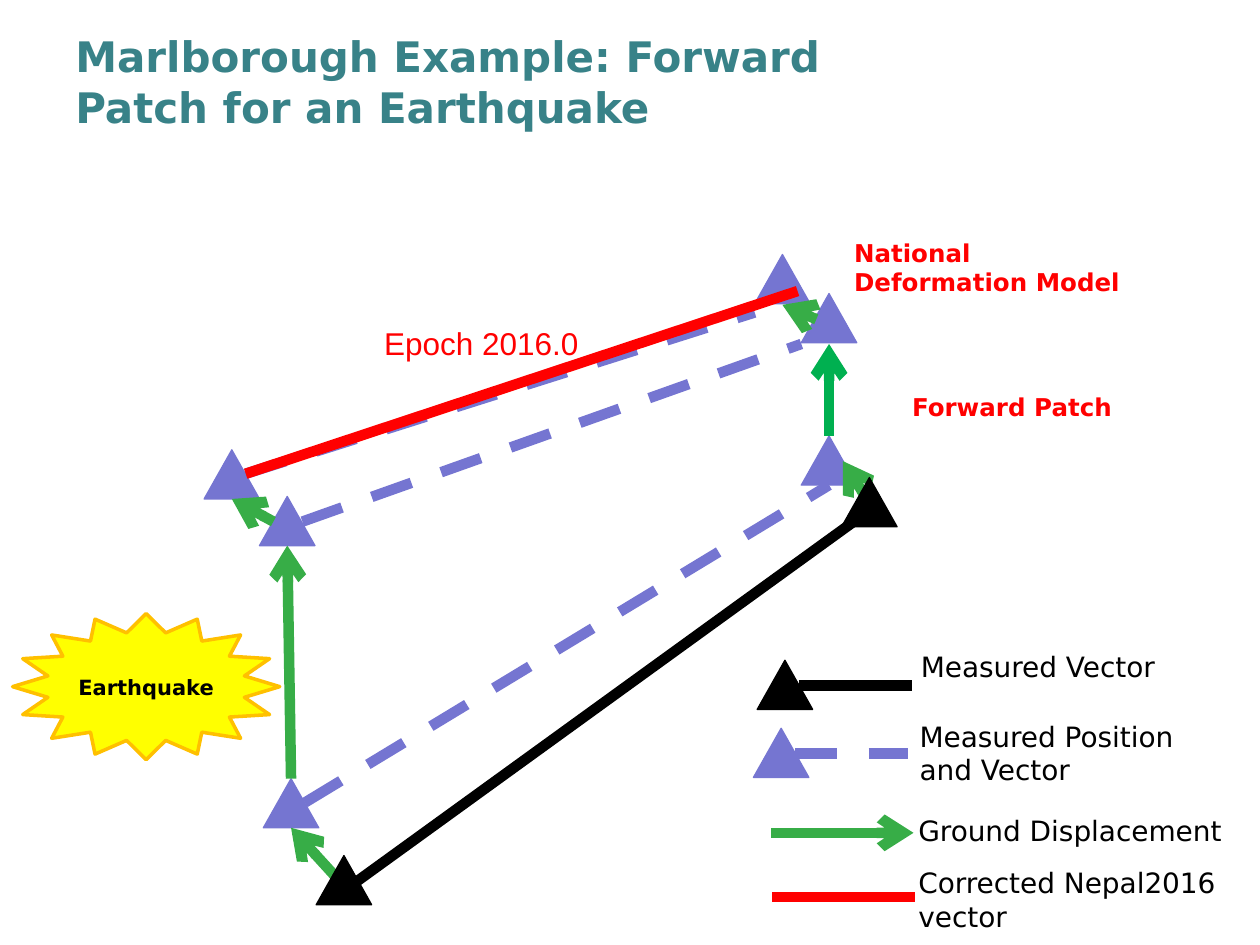
"""Build the Marlborough forward patch slide: survey vectors, ground displacement and legend."""
from lxml.etree import SubElement
from pptx import Presentation
from pptx.dml.color import RGBColor
from pptx.enum.dml import MSO_LINE
from pptx.enum.shapes import MSO_CONNECTOR, MSO_SHAPE
from pptx.enum.text import MSO_ANCHOR, PP_ALIGN
from pptx.oxml.ns import qn
from pptx.util import Pt

PX = 9144
TRI_W, TRI_H = 44, 39
COLORS = {
    "title": "388288", "position": "7575D1", "measured": "000000",
    "ground": "37AD47", "patch": "00B050", "corrected": "FF0000",
    "star": "FFFF00", "star_edge": "FFC000",
}


def rgb(name):
    return RGBColor.from_string(COLORS[name])


def add_runs(tf, lines, size, color, bold=False, font="DejaVu Sans"):
    for i, line in enumerate(lines):
        p = tf.paragraphs[0] if i == 0 else tf.add_paragraph()
        r = p.add_run()
        r.text = line
        r.font.name = font
        r.font.size = Pt(size)
        r.font.bold = bold
        r.font.color.rgb = rgb(color)


prs = Presentation()
prs.slide_width, prs.slide_height = 1000 * PX, 750 * PX
s = prs.slides.add_slide(prs.slide_layouts[6])

triangles = {
    "position": [(206, 394), (636, 233), (209, 618), (636, 346),
                 (598, 578), (162, 357), (599, 202)],
    "measured": [(601, 524), (251, 679), (668, 379)],
}
vectors = {
    "position": [(240, 414, 636, 273), (242, 637, 658, 385),
                 (631, 598, 721, 598), (195, 376, 599, 248)],
    "ground": [(690, 399, 669, 366), (272, 702, 231, 657), (231, 618, 228, 433),
               (612, 661, 725, 661), (217, 414, 184, 396), (647, 253, 621, 242)],
    "patch": [(658, 346, 658, 273)],
    "measured": [(634, 544, 724, 544), (284, 699, 690, 405)],
    "corrected": [(613, 712, 726, 712), (195, 376, 633, 231)],
}

for kind in ("position", "ground", "patch", "measured", "corrected"):
    for x, y in triangles.get(kind, []):
        sp = s.shapes.add_shape(MSO_SHAPE.ISOSCELES_TRIANGLE,
                                x * PX, y * PX, TRI_W * PX, TRI_H * PX)
        sp.shadow.inherit = False
        sp.fill.solid()
        sp.fill.fore_color.rgb = rgb(kind)
        sp.line.color.rgb = rgb(kind)
        sp.line.width = Pt(0.75)
    for ends in vectors[kind]:
        cn = s.shapes.add_connector(MSO_CONNECTOR.STRAIGHT, *[v * PX for v in ends])
        cn.line.color.rgb = rgb(kind)
        cn.line.width = Pt(6)
        if kind == "position":
            cn.line.dash_style = MSO_LINE.DASH
        if kind in ("ground", "patch"):
            SubElement(cn.line._get_or_add_ln(), qn("a:tailEnd"), type="arrow")
        SubElement(cn._element.spPr, qn("a:effectLst"))

star = s.shapes.add_shape(MSO_SHAPE.STAR_16_POINT, 10 * PX, 487 * PX, 212 * PX, 116 * PX)
star.shadow.inherit = False
star.fill.solid()
star.fill.fore_color.rgb = rgb("star")
star.line.color.rgb = rgb("star_edge")
star.line.width = Pt(2)
tf = star.text_frame
tf.margin_left = tf.margin_right = tf.margin_top = tf.margin_bottom = 0
tf.vertical_anchor = MSO_ANCHOR.MIDDLE
tf.word_wrap = False
add_runs(tf, ["Earthquake"], 12, "measured", True)
tf.paragraphs[0].alignment = PP_ALIGN.CENTER

labels = [
    (50, 21, 664, 87, ["Marlborough Example: Forward Patch for an Earthquake"],
     24, "title", True, "DejaVu Sans"),
    (721, 511, 216, 37, ["Measured Vector"], 16, "measured", False, "DejaVu Sans"),
    (720, 566, 232, 64, ["Measured Position", "and Vector"],
     16, "measured", False, "DejaVu Sans"),
    (719, 641, 270, 37, ["Ground Displacement"], 16, "measured", False, "DejaVu Sans"),
    (719, 682, 281, 64, ["Corrected Nepal2016 vector"],
     16, "measured", False, "DejaVu Sans"),
    (668, 184, 234, 57, ["National", "Deformation Model"],
     14, "corrected", True, "DejaVu Sans"),
    (714, 306, 234, 34, ["Forward Patch"], 14, "corrected", True, "DejaVu Sans"),
    (295, 252, 176, 40, ["Epoch 2016.0"], 18, "corrected", False, "Arial"),
]
for x, y, w, h, lines, size, color, bold, font in labels:
    tf = s.shapes.add_textbox(x * PX, y * PX, w * PX, h * PX).text_frame
    tf.word_wrap = True
    if color == "title":
        tf.vertical_anchor = MSO_ANCHOR.MIDDLE
    add_runs(tf, lines, size, color, bold, font)

prs.save("out.pptx")
